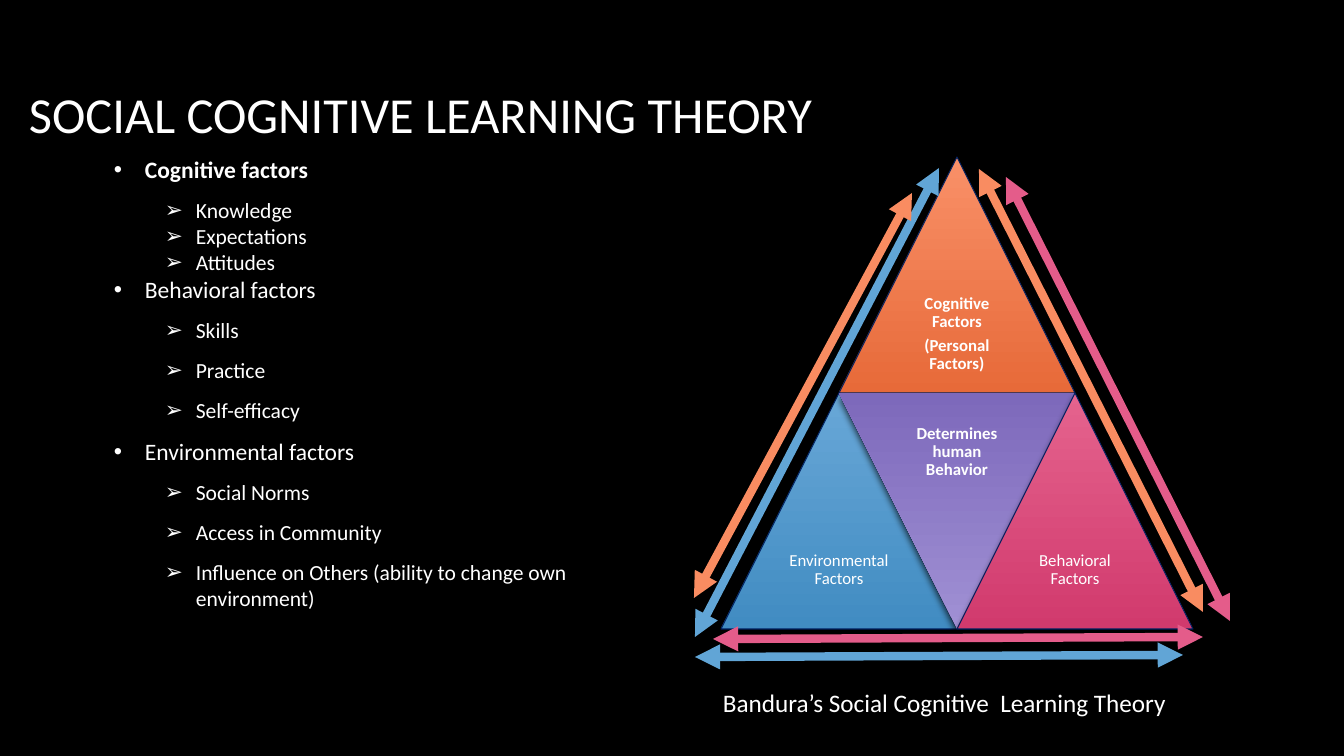
from lxml.etree import SubElement
from pptx import Presentation
from pptx.dml.color import RGBColor
from pptx.enum.shapes import MSO_CONNECTOR, MSO_SHAPE
from pptx.enum.text import MSO_ANCHOR, PP_ALIGN
from pptx.oxml.ns import qn
from pptx.util import Pt

SCALE = 914400 / 100.8
WHITE, ORANGE, PINK, BLUE = "FFFFFF", "F98C61", "E45C8A", "61A5D6"


def px(n):
    return round(n * SCALE)


def color(code):
    return RGBColor.from_string(code)


def child(node, tag, **attrs):
    return SubElement(node, qn(tag), {k: str(v) for k, v in attrs.items()})


def style(para, size, bold=False):
    font = para.font
    font.name, font.size, font.bold = "Calibri", Pt(size), bold
    font.color.rgb = color(WHITE)


def add_frame(slide, box, anchor=MSO_ANCHOR.TOP):
    frame = slide.shapes.add_textbox(*map(px, box)).text_frame
    frame.word_wrap = True
    frame.vertical_anchor = anchor
    return frame


def add_line(slide, box, text, size, anchor=MSO_ANCHOR.TOP):
    para = add_frame(slide, box, anchor).paragraphs[0]
    para.text = text
    style(para, size)


def add_bullet(para, mark, left):
    props = para._p.get_or_add_pPr()
    props.set("marL", str(px(left)))
    props.set("indent", str(px(-31)))
    child(child(props, "a:buClr"), "a:srgbClr", val=WHITE)
    child(props, "a:buFont", typeface="Arial")
    child(props, "a:buChar", char=mark)


def add_outline(slide, box, groups):
    frame = add_frame(slide, box)
    rows = []
    for head, items, gap, bold in groups:
        rows.append((head, 0, 10, bold))
        rows += [(item, 1, gap, False) for item in items]
    for i, (text, level, gap, bold) in enumerate(rows):
        para = frame.add_paragraph() if i else frame.paragraphs[0]
        para.text = text
        para.level = level
        add_bullet(para, "•➢"[level], (31, 82)[level])
        para.space_after = Pt(gap)
        style(para, (16.8, 15.4)[level], bold)


def add_shadow(shape):
    shape.shadow.inherit = False
    effects = shape._element.spPr.find(qn("a:effectLst"))
    outer = child(effects, "a:outerShdw", blurRad=Pt(5), dist=Pt(3),
                  dir=5400000, algn="ctr", rotWithShape=0)
    child(child(outer, "a:srgbClr", val="000000"), "a:alpha", val=65000)


def add_part(slide, box, stops, texts, bold, flip=False):
    left, top, side, _ = box
    shape = slide.shapes.add_shape(MSO_SHAPE.ISOSCELES_TRIANGLE, *map(px, box))
    shape.fill.gradient()
    shape.fill.gradient_angle = 270
    for stop, code in zip(shape.fill.gradient_stops, stops):
        stop.color.rgb = color(code)
    if flip:
        shape.rotation = 180
        shape.line.fill.background()
    else:
        shape.line.color.rgb = color("002060")
        shape.line.width = Pt(0.75)
    add_shadow(shape)
    half = side // 2
    drop = 0 if flip else half
    frame = add_frame(slide, (left + half // 2, top + drop, half, half),
                      MSO_ANCHOR.MIDDLE)
    frame.margin_left = frame.margin_right = px(5)
    frame.margin_top = frame.margin_bottom = px(5)
    for i, text in enumerate(texts):
        para = frame.add_paragraph() if i else frame.paragraphs[0]
        para.text = text
        para.alignment = PP_ALIGN.CENTER
        para.line_spacing = 0.9
        para.space_after = Pt(4.2)
        style(para, 12, bold)


def add_pyramid(slide, box):
    left, top, width, _ = box
    side = width // 2
    parts = [
        (1, 0, ("F99068", "E76A39"),
         ["Cognitive Factors", "(Personal Factors)"], True, False),
        (0, 1, ("68A7D7", "418CC2"), ["Environmental Factors"], False, False),
        (1, 1, ("A090D4", "7D69BB"),
         ["Determines human Behavior"], True, True),
        (2, 1, ("E5638E", "D13A6D"), ["Behavioral Factors"], False, False),
    ]
    for col, row, *rest in parts:
        spot = left + col * side // 2, top + row * side, side, side
        add_part(slide, spot, *rest)


def add_arrows(slide, box):
    left, top, _, _ = box
    arrows = [
        (258, 12, 482, 455, ORANGE),
        (285, 20, 509, 464, PINK),
        (-8, 482, 482, 480, PINK),
        (-26, 500, 462, 498, BLUE),
        (-26, 480, 218, 11, BLUE),
        (191, 36, -27, 441, ORANGE),
    ]
    for x1, y1, x2, y2, code in arrows:
        arrow = slide.shapes.add_connector(
            MSO_CONNECTOR.STRAIGHT, px(left + x1), px(top + y1),
            px(left + x2), px(top + y2))
        arrow.line.color.rgb = color(code)
        arrow.line.width = Pt(6)
        line = arrow.line._ln
        child(line, "a:headEnd", type="triangle")
        child(line, "a:tailEnd", type="triangle")
        child(arrow._element.spPr, "a:effectLst")


def build(slide):
    slide.background.fill.solid()
    slide.background.fill.fore_color.rgb = color("000000")
    add_line(slide, (19, 33, 1117, 160), "SOCIAL COGNITIVE LEARNING THEORY",
             36, MSO_ANCHOR.MIDDLE)
    pyramid = (721, 157, 472, 472)
    add_pyramid(slide, pyramid)
    add_line(slide, (713, 682, 489, 40),
             "Bandura’s Social Cognitive  Learning Theory", 18)
    add_outline(slide, (104, 150, 550, 402), [
        ("Cognitive factors",
         ["Knowledge", "Expectations", "Attitudes"], 0, True),
        ("Behavioral factors",
         ["Skills", "Practice", "Self-efficacy"], 10, False),
        ("Environmental factors",
         ["Social Norms", "Access in Community",
          "Influence on Others (ability to change own environment)"],
         10, False),
    ])
    add_arrows(slide, pyramid)


def main():
    deck = Presentation()
    deck.slide_width, deck.slide_height = px(1344), px(756)
    build(deck.slides.add_slide(deck.slide_layouts[6]))
    deck.save("out.pptx")


if __name__ == "__main__":
    main()
